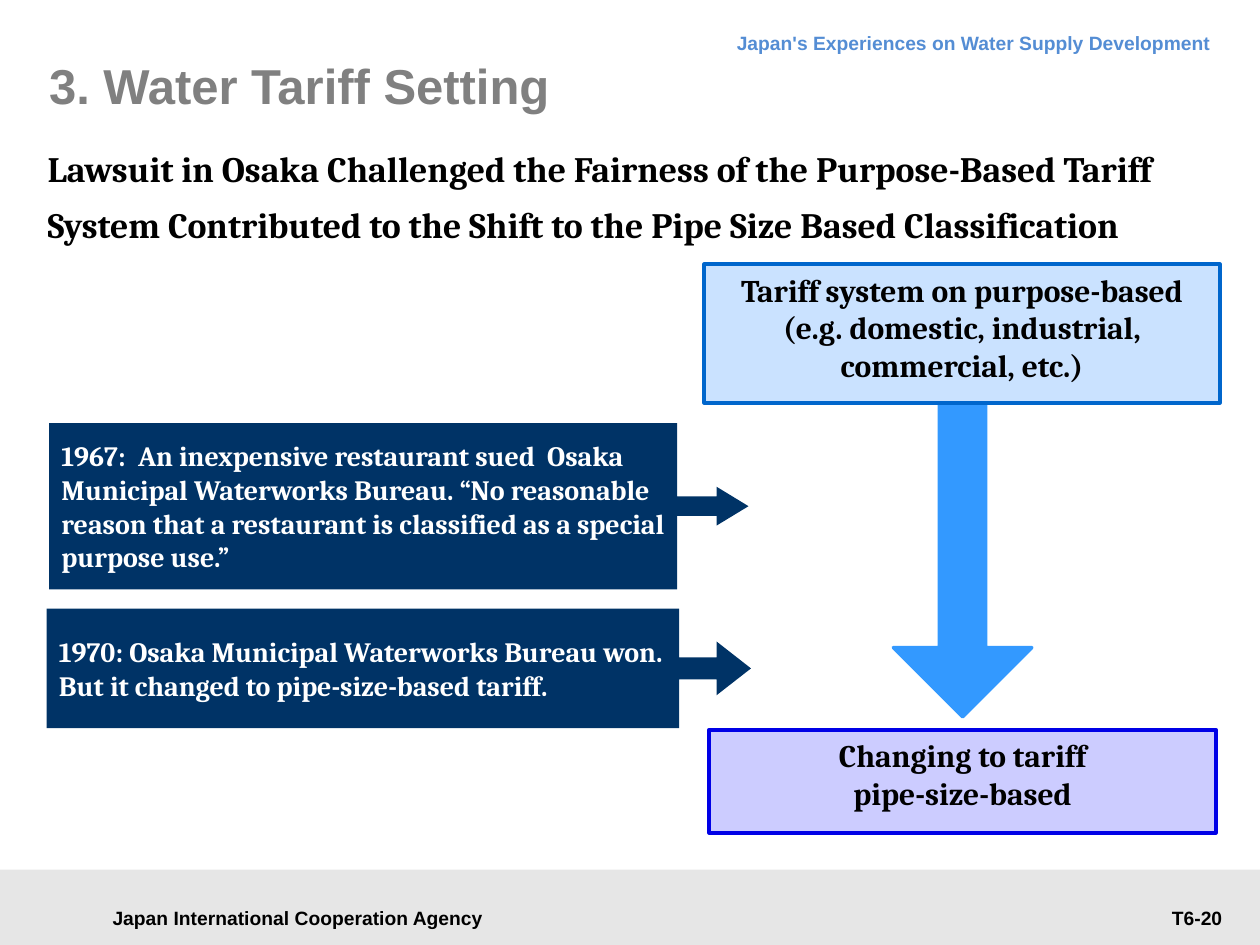
import pptx
import pptx.dml.color
import pptx.enum.shapes
import pptx.enum.text
import pptx.util

Cm = pptx.util.Cm
Pt = pptx.util.Pt
SHAPE = pptx.enum.shapes.MSO_SHAPE
ALIGN = pptx.enum.text.PP_ALIGN
ANCHOR = pptx.enum.text.MSO_ANCHOR

COLORS = {
    "black": "000000", "white": "FFFFFF", "title": "808080", "header": "548DD4",
    "footer": "E6E6E6", "arrow": "3399FF", "event": "003366",
    "old_fill": "CAE2FF", "old_line": "0066CC",
    "new_fill": "CCCCFF", "new_line": "0000E6",
}

presentation = pptx.Presentation()
presentation.slide_width = Cm(25.4)
presentation.slide_height = Cm(19.05)
slide = presentation.slides.add_slide(presentation.slide_layouts[6])


def add_block(kind, box, fill, line=None, line_width=2.25, adjustments=()):
    shape = slide.shapes.add_shape(kind, *map(Cm, box))
    shape.shadow.inherit = False
    shape.fill.solid()
    shape.fill.fore_color.rgb = pptx.dml.color.RGBColor.from_string(COLORS[fill])
    if line:
        shape.line.color.rgb = pptx.dml.color.RGBColor.from_string(COLORS[line])
        shape.line.width = Pt(line_width)
    else:
        shape.line.fill.background()
    for index, value in enumerate(adjustments):
        shape.adjustments[index] = value
    return shape


def write_text(text, shape=None, box=None, size=11, font="Arial", color="black",
               align=ALIGN.LEFT, anchor=ANCHOR.TOP, spacing=None, left_inset=None):
    if shape is None:
        shape = slide.shapes.add_textbox(*map(Cm, box))
    frame = shape.text_frame
    frame.word_wrap = True
    frame.vertical_anchor = anchor
    if left_inset is not None:
        frame.margin_left = Cm(left_inset)
        frame.margin_top = frame.margin_right = frame.margin_bottom = 0
    frame.text = text
    for paragraph in frame.paragraphs:
        paragraph.alignment = align
        if spacing:
            paragraph.line_spacing = Pt(spacing)
        paragraph.font.name = font
        paragraph.font.size = Pt(size)
        paragraph.font.bold = True
        paragraph.font.color.rgb = pptx.dml.color.RGBColor.from_string(COLORS[color])


add_block(SHAPE.RECTANGLE, (0, 17.53, 25.4, 1.52), "footer")
write_text("Japan International Cooperation Agency", box=(1.8, 18.08, 8.41, 0.86),
           align=ALIGN.CENTER, anchor=ANCHOR.MIDDLE)
write_text("Japan's Experiences on Water Supply Development",
           box=(6.91, 0.33, 17.75, 0.97), color="header", align=ALIGN.RIGHT, spacing=18)
write_text("T6-20", box=(20.9, 18.14, 3.99, 0.74), align=ALIGN.RIGHT)

add_block(SHAPE.DOWN_ARROW, (18.01, 7.26, 2.79, 7.19), "arrow", "arrow", 2, (0.335, 0.5))

write_text("Lawsuit in Osaka Challenged the Fairness of the Purpose-Based Tariff "
           "System Contributed to the Shift to the Pipe Size Based Classification",
           box=(0.71, 2.69, 24, 3.05), size=20.4, font="Cambria", spacing=32,
           left_inset=0.25)
write_text("3. Water Tariff Setting", box=(0.99, 0.71, 22.81, 2.01), size=28,
           color="title", anchor=ANCHOR.MIDDLE, left_inset=0)

tariff_systems = [
    ("Tariff system on purpose-based (e.g. domestic, industrial, commercial, etc.)",
     (14.2, 5.33, 10.39, 2.79), "old_fill", "old_line"),
    ("Changing to tariff\npipe-size-based",
     (14.3, 14.71, 10.21, 2.08), "new_fill", "new_line"),
]
for text, box, fill, line in tariff_systems:
    system = add_block(SHAPE.RECTANGLE, box, fill, line)
    write_text(text, shape=system, size=18, font="Cambria", align=ALIGN.CENTER)

lawsuit_events = [
    ("1967:  An inexpensive restaurant sued  Osaka Municipal Waterworks Bureau. "
     "“No reasonable reason that a restaurant is classified as a special purpose use.”",
     (0.99, 8.53, 14.1, 3.35), (0.118, 0.117, 0.192, 0.898)),
    ("1970: Osaka Municipal Waterworks Bureau won. "
     "But it changed to pipe-size-based tariff.",
     (0.94, 12.27, 14.2, 2.41), (0.185, 0.225, 0.288, 0.898)),
]
for text, box, adjustments in lawsuit_events:
    event = add_block(SHAPE.RIGHT_ARROW_CALLOUT, box, "event", adjustments=adjustments)
    write_text(text, shape=event, size=16, font="Cambria", color="white",
               anchor=ANCHOR.MIDDLE)

presentation.save("out.pptx")
